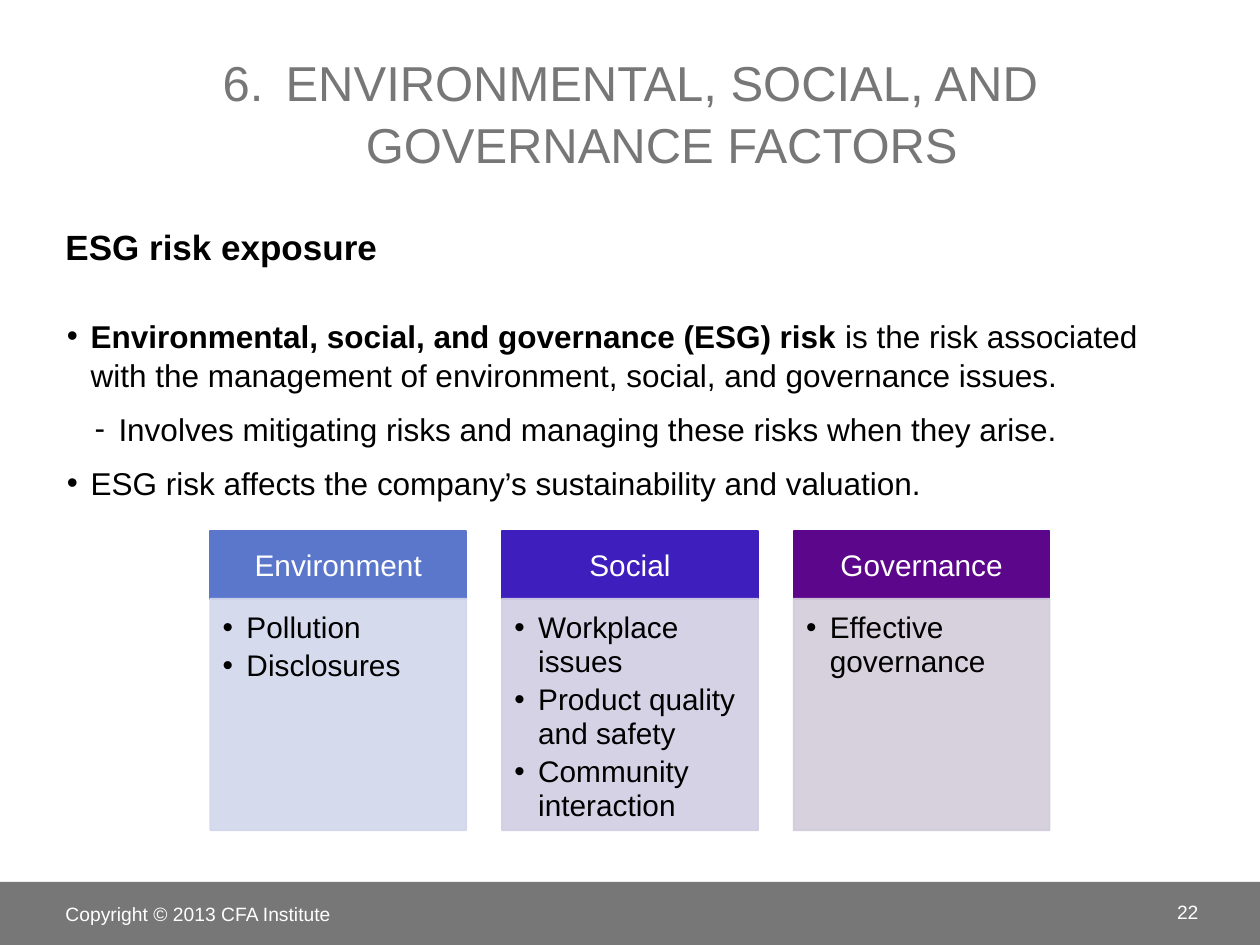
from lxml.etree import SubElement
from pptx import Presentation
from pptx.dml.color import RGBColor
from pptx.enum.shapes import MSO_SHAPE
from pptx.enum.text import MSO_ANCHOR, PP_ALIGN
from pptx.oxml.ns import qn
from pptx.util import Cm, Pt

GRAY = RGBColor(0x77, 0x77, 0x77)
BLACK = RGBColor(0, 0, 0)
WHITE = RGBColor(0xFF, 0xFF, 0xFF)
FONT = "Arial"

# Content
TITLE = "6.\tENVIRONMENTAL, SOCIAL, AND GOVERNANCE FACTORS"
HEADING = "ESG risk exposure"
# Each point: bullet, left margin in cm, runs of (text, bold)
POINTS = [
    ("•", 0.51, [
        ("Environmental, social, and governance (ESG) risk ", True),
        ("is the risk associated with the management of environment, "
         "social, and governance issues.", False),
    ]),
    ("-", 1.07, [("Involves mitigating risks and managing these risks when they arise.", False)]),
    ("•", 0.51, [("ESG risk affects the company’s sustainability and valuation.", False)]),
]
# Each column: name, header colour, panel colour, items
COLUMNS = [
    ("Environment", RGBColor(0x5B, 0x77, 0xCC), RGBColor(0xD2, 0xD6, 0xEC),
     ["Pollution", "Disclosures"]),
    ("Social", RGBColor(0x3E, 0x1F, 0xBE), RGBColor(0xD1, 0xCE, 0xE4),
     ["Workplace issues", "Product quality and safety", "Community interaction"]),
    ("Governance", RGBColor(0x5C, 0x06, 0x8C), RGBColor(0xD2, 0xCC, 0xDA),
     ["Effective governance"]),
]
COPYRIGHT = "Copyright © 2013 CFA Institute"
PAGE_NUMBER = "22"

# Column layout in cm
COLUMN_LEFT, COLUMN_STEP, COLUMN_WIDTH = 4.24, 5.88, 5.16
HEADER_TOP, HEADER_HEIGHT, PANEL_HEIGHT = 10.71, 1.36, 4.67


def add_text_box(slide, left, top, width, height, anchor=MSO_ANCHOR.MIDDLE):
    box = slide.shapes.add_textbox(Cm(left), Cm(top), Cm(width), Cm(height))
    box.text_frame.word_wrap = True
    box.text_frame.vertical_anchor = anchor
    return box.text_frame


def add_rectangle(slide, left, top, width, height, color, outlined=True, opacity=None):
    shape = slide.shapes.add_shape(
        MSO_SHAPE.RECTANGLE, Cm(left), Cm(top), Cm(width), Cm(height))
    shape.shadow.inherit = False
    shape.fill.solid()
    shape.fill.fore_color.rgb = color
    if outlined:
        shape.line.color.rgb = color
        shape.line.width = Pt(1)
    else:
        shape.line.fill.background()
    if opacity:
        for color_element in shape.element.spPr.iter(qn("a:srgbClr")):
            SubElement(color_element, qn("a:alpha"), val=str(opacity * 1000))
    return shape


def set_insets(frame, left, top, right, bottom):
    frame.margin_left, frame.margin_top = Cm(left), Cm(top)
    frame.margin_right, frame.margin_bottom = Cm(right), Cm(bottom)


def next_paragraph(frame, index):
    return frame.add_paragraph() if index else frame.paragraphs[0]


def set_indent(paragraph, margin, hanging, bullet=None):
    properties = paragraph._p.get_or_add_pPr()
    properties.set("marL", str(Cm(margin)))
    properties.set("indent", str(-Cm(hanging)))
    if bullet:
        SubElement(properties, qn("a:buFont"), typeface=FONT)
        SubElement(properties, qn("a:buChar"), char=bullet)


def add_run(paragraph, text, size, color, bold=False):
    run = paragraph.add_run()
    run.text = text
    run.font.name = FONT
    run.font.size = Pt(size)
    run.font.bold = bold
    run.font.color.rgb = color


def add_heading_texts(slide):
    title = add_text_box(slide, 1.07, 0.43, 23.27, 3.18, MSO_ANCHOR.BOTTOM).paragraphs[0]
    set_indent(title, 1.27, 1.27)
    title.alignment = PP_ALIGN.CENTER
    title.line_spacing = 1.05
    add_run(title, TITLE, 28, GRAY)
    heading = add_text_box(slide, 1.07, 4.01, 23.29, 1.91).paragraphs[0]
    add_run(heading, HEADING, 20, BLACK, bold=True)


def add_points(slide):
    frame = add_text_box(slide, 1.07, 6.22, 23.27, 10.92, MSO_ANCHOR.TOP)
    for index, (bullet, margin, runs) in enumerate(POINTS):
        paragraph = next_paragraph(frame, index)
        set_indent(paragraph, margin, 0.48, bullet)
        paragraph.line_spacing = 1.05
        if index:
            paragraph.space_before = Pt(8)
        for text, bold in runs:
            add_run(paragraph, text, 18, BLACK, bold)


def add_column(slide, left, name, header_color, panel_color, items):
    header = add_rectangle(slide, left, HEADER_TOP, COLUMN_WIDTH, HEADER_HEIGHT, header_color)
    frame = header.text_frame
    set_insets(frame, 0.33, 0.2, 0.33, 0.2)
    frame.vertical_anchor = MSO_ANCHOR.MIDDLE
    frame.paragraphs[0].alignment = PP_ALIGN.CENTER
    add_run(frame.paragraphs[0], name, 17, WHITE)

    panel = add_rectangle(slide, left, HEADER_TOP + HEADER_HEIGHT, COLUMN_WIDTH,
                          PANEL_HEIGHT, panel_color, opacity=90)
    frame = panel.text_frame
    set_insets(frame, 0.25, 0.25, 0.33, 0.38)
    frame.vertical_anchor = MSO_ANCHOR.TOP
    for index, item in enumerate(items):
        paragraph = next_paragraph(frame, index)
        set_indent(paragraph, 0.48, 0.48, "•")
        paragraph.alignment = PP_ALIGN.LEFT
        paragraph.line_spacing = 0.95
        paragraph.space_after = Pt(2.5)
        add_run(paragraph, item, 17, BLACK)


def add_footer(slide):
    add_rectangle(slide, 0, 17.78, 25.4, 1.27, GRAY, outlined=False)
    notice = add_text_box(slide, 1.07, 17.86, 8.05, 1.12).paragraphs[0]
    add_run(notice, COPYRIGHT, 11, WHITE)
    number = add_text_box(slide, 22.23, 17.88, 2.18, 1.02).paragraphs[0]
    number.alignment = PP_ALIGN.RIGHT
    add_run(number, PAGE_NUMBER, 11, WHITE)


def main():
    presentation = Presentation()
    presentation.slide_width, presentation.slide_height = Cm(25.4), Cm(19.05)
    slide = presentation.slides.add_slide(presentation.slide_layouts[6])
    add_footer(slide)
    add_heading_texts(slide)
    add_points(slide)
    for index, column in enumerate(COLUMNS):
        add_column(slide, COLUMN_LEFT + index * COLUMN_STEP, *column)
    presentation.save("out.pptx")


if __name__ == "__main__":
    main()
